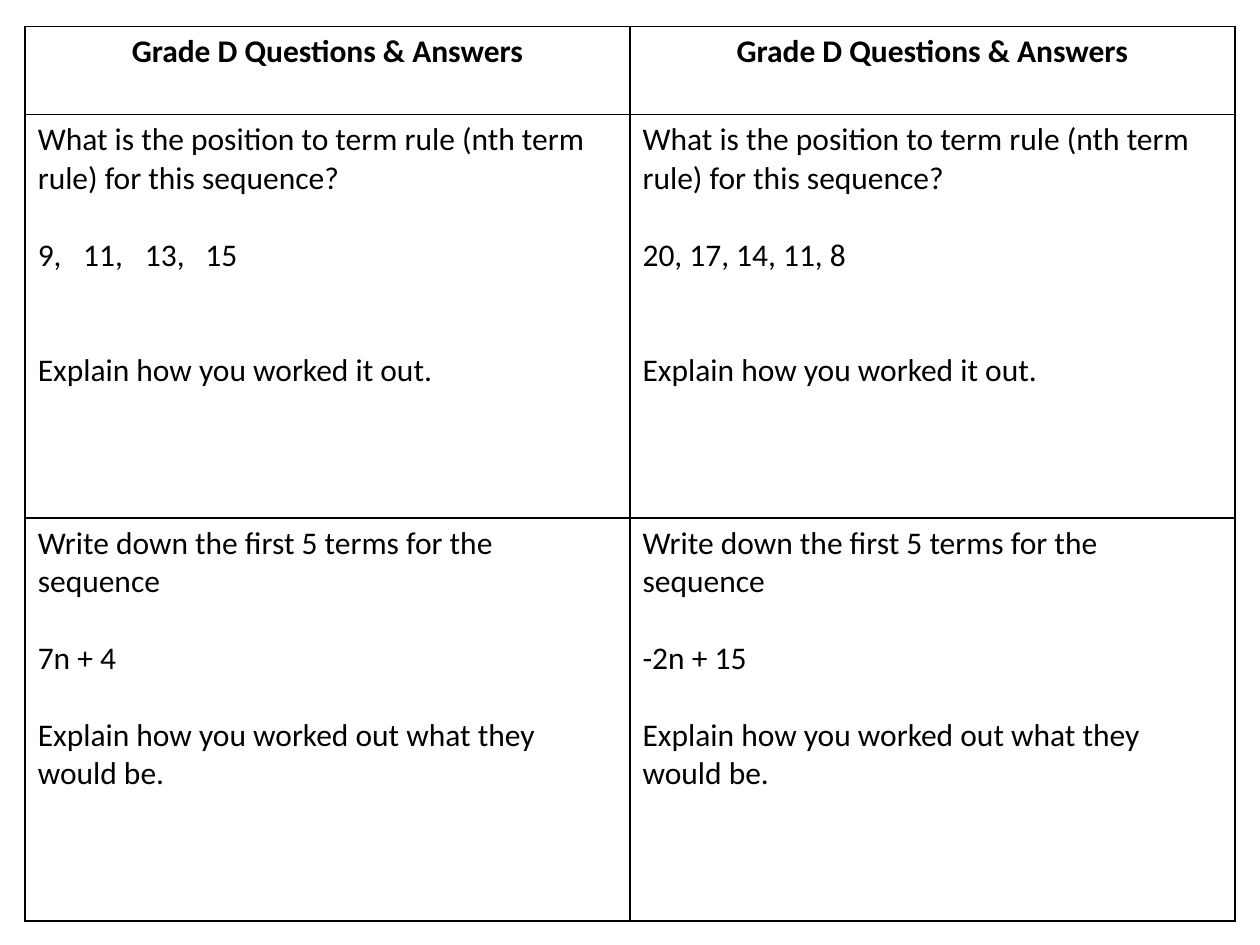
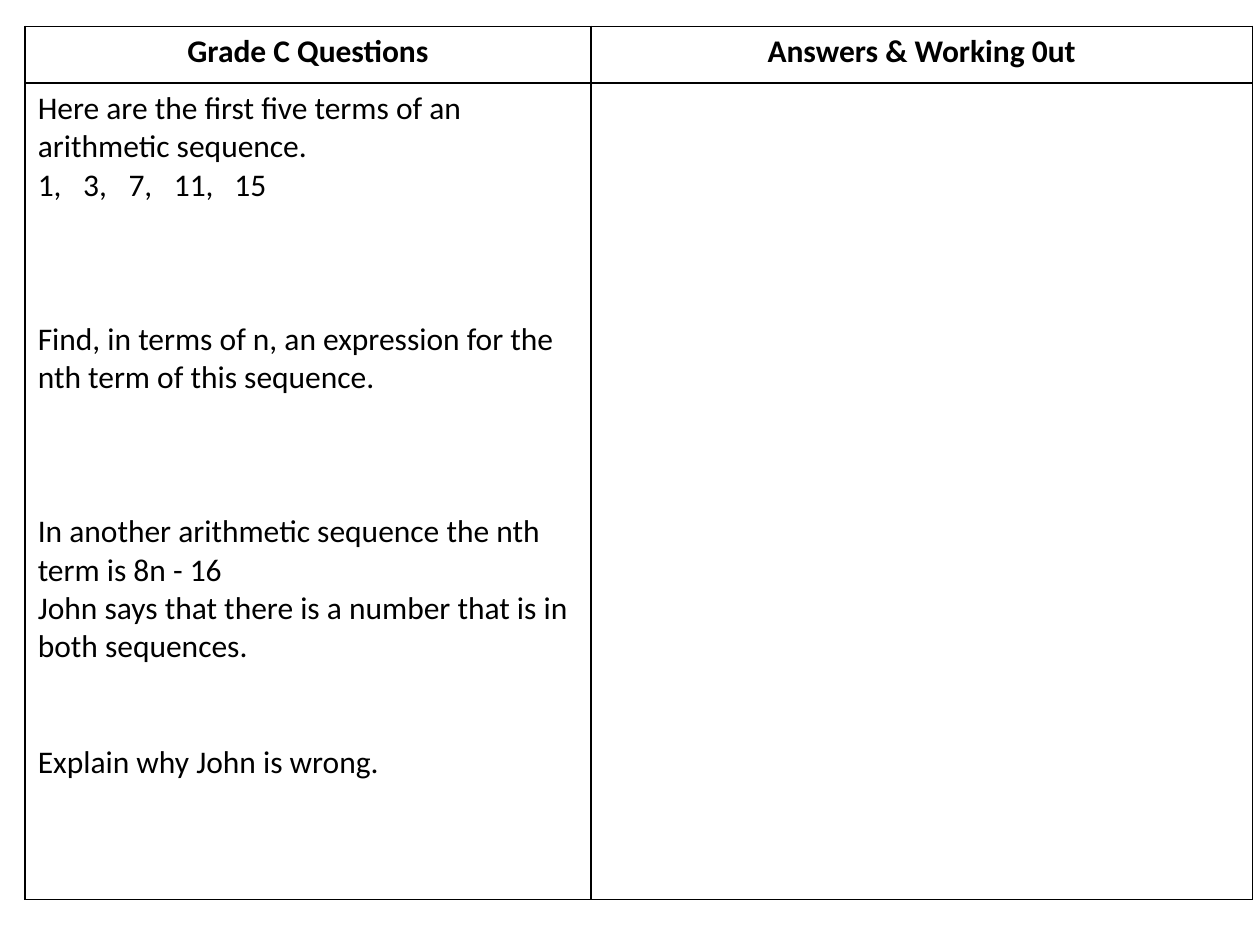
from lxml.etree import SubElement
from pptx import Presentation
from pptx.dml.color import RGBColor
from pptx.enum.text import PP_ALIGN
from pptx.oxml.ns import qn
from pptx.util import Inches, Pt

BLACK = RGBColor(0, 0, 0)
FONT = "Calibri"
TEXT_SIZE = Pt(18)
LINE_HEIGHT = Pt(22)
LEFT, TOP = 0.2, 0.21


def write_paragraph(cell, index, text, blank_lines=0, tab_stops=(), heading=False):
    frame = cell.text_frame
    para = frame.paragraphs[0] if index == 0 else frame.add_paragraph()
    para.alignment = PP_ALIGN.CENTER if heading else PP_ALIGN.LEFT
    if blank_lines:
        para.space_before = LINE_HEIGHT * blank_lines
    span = para.add_run()
    span.text = text
    span.font.name = FONT
    span.font.size = TEXT_SIZE
    span.font.bold = heading
    span.font.color.rgb = BLACK
    if tab_stops:
        properties = para._p.get_or_add_pPr()
        tab_list = SubElement(properties, qn("a:tabLst"))
        for stop in tab_stops:
            SubElement(tab_list, qn("a:tab"), pos=str(Inches(stop)), algn="l")


def draw_borders(cell):
    properties = cell._tc.get_or_add_tcPr()
    for side in ("lnL", "lnR", "lnT", "lnB"):
        line = SubElement(properties, qn(f"a:{side}"), w=str(Pt(1)))
        fill = SubElement(line, qn("a:solidFill"))
        SubElement(fill, qn("a:srgbClr"), val=str(BLACK))


# Each paragraph: text, blank lines above it, tab stops
def rule_question(sequence, tab_stops=()):
    return [
        ("What is the position to term rule (nth term rule) for this sequence?",),
        (sequence, 1, tab_stops),
        ("Explain how you worked it out.", 2),
    ]


terms_questions = [
    [
        ("Write down the first 5 terms for the sequence",),
        (expression, 1),
        ("Explain how you worked out what they would be.", 1),
    ]
    for expression in ("7n + 4", "-2n + 15")
]

grade_c_question = [
    ("Here are the first five terms of an arithmetic sequence.",),
    ("1,\t3,\t7,\t11,\t15", 0, (0.36, 0.72, 1.08, 1.56)),
    ("Find, in terms of n, an expression for the nth term of this sequence.", 3),
    ("In another arithmetic sequence the nth term is 8n - 16", 3),
    ("John says that there is a number that is in both sequences.",),
    ("Explain why John is wrong.", 2),
]

# Each worksheet: column widths, row heights, rows of cells
worksheets = [
    (
        (4.8, 4.8),
        (0.7, 3.2, 3.2),
        [
            [[("Grade D Questions & Answers",)]] * 2,
            [
                rule_question("9,\t11,\t13,\t15", (0.36, 0.85, 1.33)),
                rule_question("20, 17, 14, 11, 8"),
            ],
            terms_questions,
        ],
    ),
    (
        (4.49, 5.25),
        (0.45, 6.48),
        [
            [[("Grade C Questions",)], [("Answers & Working 0ut",)]],
            [grade_c_question, []],
        ],
    ),
]

deck = Presentation()
deck.slide_width, deck.slide_height = Inches(10), Inches(7.5)

for widths, heights, rows in worksheets:
    page = deck.slides.add_slide(deck.slide_layouts[6])
    table = page.shapes.add_table(
        len(heights), len(widths), Inches(LEFT), Inches(TOP),
        Inches(sum(widths)), Inches(sum(heights)),
    ).table
    table.first_row = table.horz_banding = False

    # Grid
    for column, width in zip(table.columns, widths):
        column.width = Inches(width)
    for row, height in zip(table.rows, heights):
        row.height = Inches(height)

    # Headings and questions
    for row_number, row in enumerate(rows):
        for column_number, paragraphs in enumerate(row):
            cell = table.cell(row_number, column_number)
            draw_borders(cell)
            cell.fill.background()
            for index, paragraph in enumerate(paragraphs):
                write_paragraph(cell, index, *paragraph, heading=row_number == 0)

deck.save("out.pptx")
